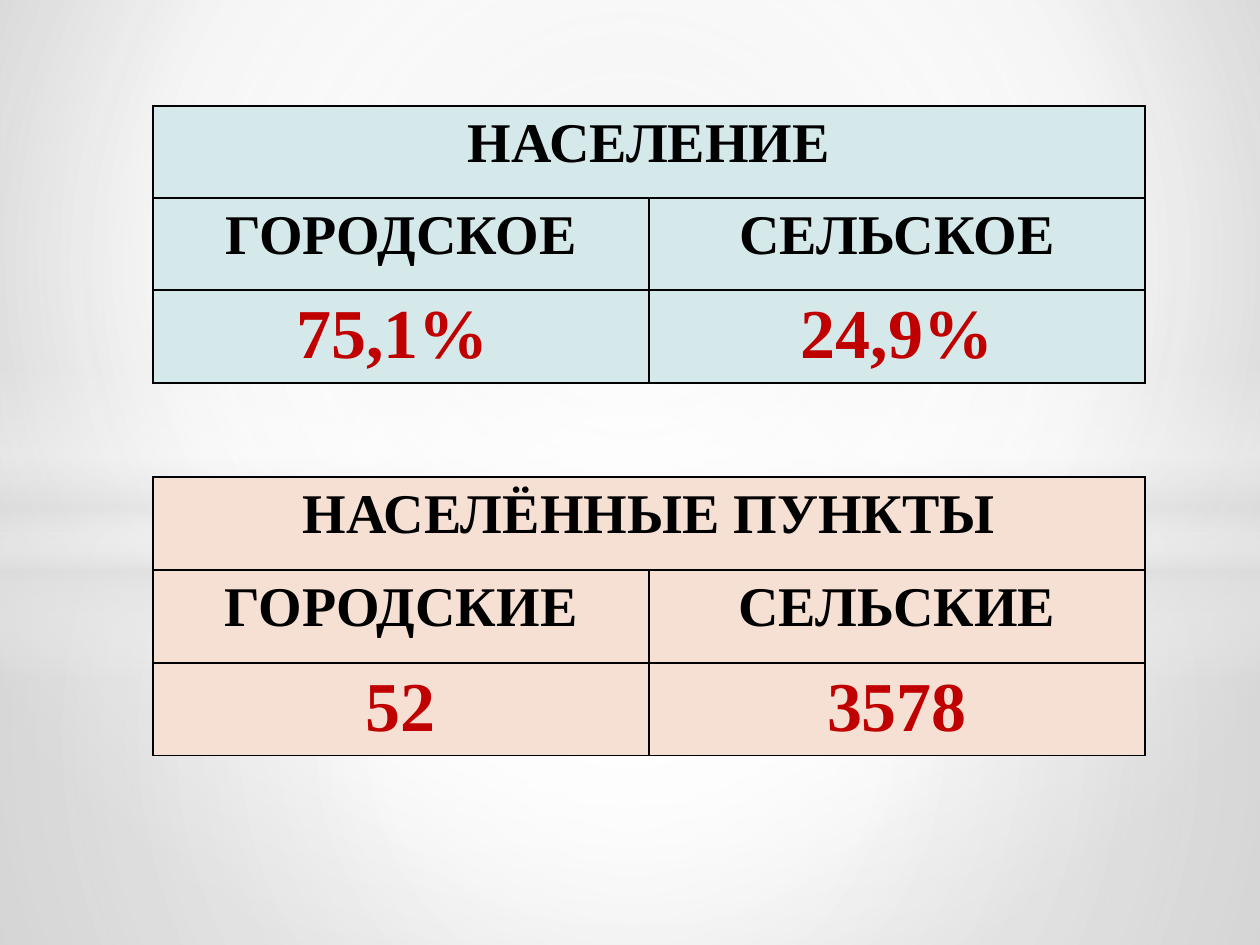
import pptx
import pptx.util
import pptx.dml.color
import pptx.enum.shapes
import pptx.enum.text
import pptx.oxml
import pptx.oxml.ns

SECTIONS = [
    {"heading": "НАСЕЛЕНИЕ", "fill": "population",
     "labels": ("ГОРОДСКОЕ", "СЕЛЬСКОЕ"), "values": ("75,1% ", "24,9%")},
    {"heading": "НАСЕЛЁННЫЕ ПУНКТЫ", "fill": "settlements",
     "labels": ("ГОРОДСКИЕ", "СЕЛЬСКИЕ"), "values": ("52", "3578")},
]

THEME = {
    "population": "D6E9EA", "settlements": "F5E0D3", "border": "000000",
    "border_width": 1,
    "text": {"name": "Times New Roman", "bold": True, "size": 32, "color": "000000"},
    "value": {"name": "Times New Roman", "bold": True, "size": 40, "color": "C00000"},
}

CENTRE = (50, 50, 50, 50)
# Gradient stops are (position %, colour, opacity %); focus is left, top, right, bottom %.
BACKDROP = {"stops": [(0, "D5D5D5", 100), (60, "FFFFFF", 100), (100, "B2B2B2", 100)],
            "focus": (20, 10, 20, 60)}
GLOWS = [
    {"kind": "RECTANGLE", "at": (0, 533, 1260, 412), "focus": CENTRE,
     "stops": [(0, "FFFFFF", 91), (37, "FFFFFF", 76), (100, "DEDEDE", 79)]},
    {"kind": "RECTANGLE", "at": (0, 0, 1260, 533), "focus": CENTRE,
     "stops": [(0, "FFFFFF", 89), (48, "FFFFFF", 62), (100, "DEDEDE", 79)]},
    {"kind": "RECTANGLE", "at": (0, 365, 1260, 315), "focus": None,
     "stops": [(0, "FFFFFF", 0), (29, "FFFFFF", 30), (45, "DEDEDE", 40),
               (55, "FFFFFF", 26), (65, "DEDEDE", 60), (100, "FFFFFF", 0)]},
    {"kind": "OVAL", "at": (0, 220, 1260, 703), "focus": CENTRE,
     "stops": [(0, "FFFFFF", 100), (54, "FFFFFF", 0)]},
]

PAGE = (1260, 945)
TABLE_AT = (153, 106)
COLUMN = 496
ROWS = (92, 92, 93, 94, 93, 93, 93)
SECTION_STEP = 4  # three rows and a gap row


def px(count):
    return pptx.util.Emu(round(count * 914400 / 126))


def xml(tag, content):
    return pptx.oxml.parse_xml(
        f"<a:{tag} {pptx.oxml.ns.nsdecls('a')}>{content}</a:{tag}>")


def apply_gradient(holder, stops, focus):
    """Swap the solid fill of holder for a circular or, without focus, a vertical gradient."""
    marks = "".join(
        f'<a:gs pos="{at * 1000}"><a:srgbClr val="{color}">'
        f'<a:alpha val="{opacity * 1000}"/></a:srgbClr></a:gs>'
        for at, color, opacity in stops)
    if focus:
        sides = " ".join(f'{side}="{part * 1000}"' for side, part in zip("ltrb", focus))
        direction = f'<a:path path="circle"><a:fillToRect {sides}/></a:path>'
    else:
        direction = '<a:lin ang="5400000" scaled="0"/>'
    solid = holder.find(pptx.oxml.ns.qn("a:solidFill"))
    holder.replace(solid, xml("gradFill", f"<a:gsLst>{marks}</a:gsLst>{direction}"))


def draw_backdrop(page):
    page.background.fill.solid()
    holder = page.element.find(".//" + pptx.oxml.ns.qn("p:bgPr"))
    apply_gradient(holder, **BACKDROP)
    for glow in GLOWS:
        kind = getattr(pptx.enum.shapes.MSO_SHAPE, glow["kind"])
        shape = page.shapes.add_shape(kind, *map(px, glow["at"]))
        shape.shadow.inherit = False
        shape.line.fill.background()
        shape.fill.solid()
        apply_gradient(shape.element.spPr, glow["stops"], glow["focus"])


def set_borders(cell, sides):
    """Draw the named sides and hide the others."""
    properties = cell._tc.get_or_add_tcPr()
    for index, side in enumerate("LRTB"):
        paint = (xml("solidFill", f'<a:srgbClr val="{THEME["border"]}"/>')
                 if side in sides else xml("noFill", ""))
        line = xml("ln" + side, "")
        line.set("w", str(pptx.util.Pt(THEME["border_width"])))
        line.append(paint)
        properties.insert(index, line)


def write_cell(cell, text, style):
    para = cell.text_frame.paragraphs[0]
    para.alignment = pptx.enum.text.PP_ALIGN.CENTER
    span = para.add_run()
    span.text = text
    formats = {**THEME[style], "size": pptx.util.Pt(THEME[style]["size"])}
    span.font.color.rgb = pptx.dml.color.RGBColor.from_string(formats.pop("color"))
    for name, value in formats.items():
        setattr(span.font, name, value)


def draw_table(page):
    frame = page.shapes.add_table(len(ROWS), 2, *map(px, (*TABLE_AT, 2 * COLUMN, sum(ROWS))))
    table = frame.table
    table.first_row = table.horz_banding = False
    for column in table.columns:
        column.width = px(COLUMN)
    for index, height in enumerate(ROWS):
        table.rows[index].height = px(height)
        is_gap = index % SECTION_STEP == SECTION_STEP - 1
        section = SECTIONS[index // SECTION_STEP]
        for cell in table.rows[index].cells:
            if is_gap:
                cell.fill.background()
            else:
                cell.fill.solid()
                cell.fill.fore_color.rgb = pptx.dml.color.RGBColor.from_string(
                    THEME[section["fill"]])
            set_borders(cell, "TB" if is_gap else "LRTB")
        if index % SECTION_STEP in (0, SECTION_STEP - 1):
            table.cell(index, 0).merge(table.cell(index, 1))

    for number, section in enumerate(SECTIONS):
        top = number * SECTION_STEP
        write_cell(table.cell(top, 0), section["heading"], "text")
        for column in range(2):
            write_cell(table.cell(top + 1, column), section["labels"][column], "text")
            write_cell(table.cell(top + 2, column), section["values"][column], "value")


def main():
    deck = pptx.Presentation()
    deck.slide_width, deck.slide_height = map(px, PAGE)
    page = deck.slides.add_slide(deck.slide_layouts.get_by_name("Blank"))
    draw_backdrop(page)
    draw_table(page)
    deck.save("out.pptx")


if __name__ == "__main__":
    main()
